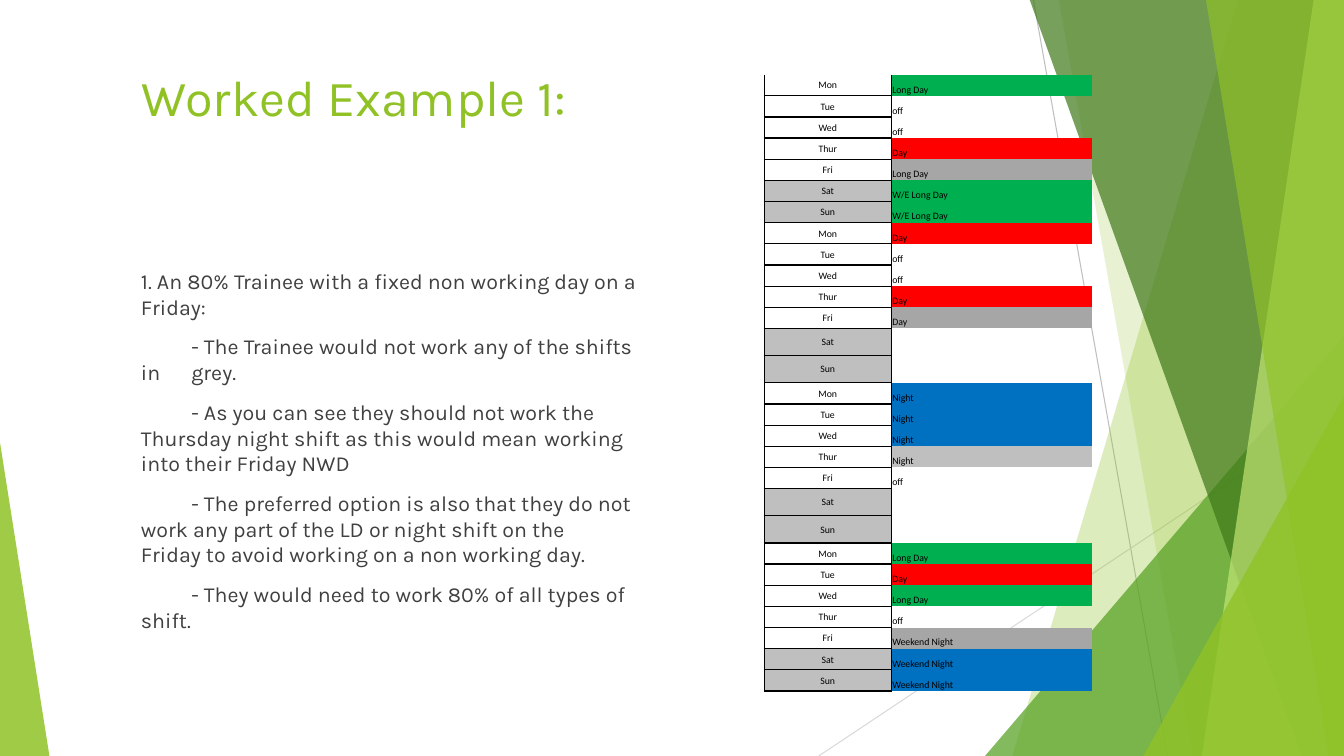
from itertools import cycle
from lxml import etree
from pptx import Presentation, util as u
from pptx.dml.color import RGBColor
from pptx.enum import shapes, text
from pptx.oxml.ns import qn

LIME = RGBColor(0x90, 0xC2, 0x26)
PALE = RGBColor(0xC0, 0xE4, 0x74)
LEAF = RGBColor(0x54, 0xA0, 0x21)
MOSS = RGBColor(0x3F, 0x78, 0x19)
MIST = RGBColor(0xD9, 0xD9, 0xD9)
SILVER = RGBColor(0xBF, 0xBF, 0xBF)
GREY = RGBColor(0xA6, 0xA6, 0xA6)
INK = RGBColor(0x40, 0x40, 0x40)
BLACK = RGBColor(0, 0, 0)
GREEN = RGBColor(0x00, 0xB0, 0x50)
RED = RGBColor(0xFF, 0, 0)
BLUE = RGBColor(0x00, 0x70, 0xC0)

WIDE, HIGH = 1333, 750
SCALE = 9144  # EMU in one px, 100 px to the inch
NO_STYLE = "{2D5ABB26-0587-4C30-8999-92F81FD0307C}"

DAYS = ["Mon", "Tue", "Wed", "Thur", "Fri", "Sat", "Sun"]
OFF, FREE = ("off", None), ("", None)
LONG, DAY, NIGHT = ("Long Day", GREEN), ("Day", RED), ("Night", BLUE)
WE_LONG, WE_NIGHT = ("W/E Long Day", GREEN), ("Weekend Night", BLUE)
SHIFTS = [
    LONG, OFF, OFF, DAY, ("Long Day", GREY), WE_LONG, WE_LONG,
    DAY, OFF, OFF, DAY, ("Day", GREY), FREE, FREE,
    NIGHT, NIGHT, NIGHT, ("Night", SILVER), OFF, FREE, FREE,
    LONG, DAY, LONG, OFF, ("Weekend Night", GREY), WE_NIGHT, WE_NIGHT,
]
NOTES = [
    "1. An 80% Trainee with a fixed non working day on a Friday:",
    "\t- The Trainee would not work any of the shifts in \tgrey.",
    "\t- As you can see they should not work the \tThursday night shift "
    "as this would mean \tworking into their Friday NWD",
    "\t- The preferred option is also that they do not \twork any part of "
    "the LD or night shift on the \tFriday to avoid working on a non working day.",
    "\t- They would need to work 80% of all types of \tshift.",
]


def px(*vals):
    return [u.Emu(v * SCALE) for v in vals]


class Deck:
    def __init__(self):
        self.prs = Presentation()
        self.prs.slide_width, self.prs.slide_height = px(WIDE, HIGH)
        self.slide = self.prs.slides.add_slide(self.prs.slide_layouts[6])
        self.items = self.slide.shapes
        self.font = "Karla"
        self.cell_font = "Calibri"

    def line(self, x1, y1, x2, y2, color):
        con = self.items.add_connector(
            shapes.MSO_CONNECTOR.STRAIGHT, *px(x1, y1, x2, y2))
        con.line.color.rgb = color
        con.line.width = u.Pt(0.75)
        etree.SubElement(con._element.spPr, qn("a:effectLst"))

    def paint(self, shape, color, alpha):
        """Fill without outline or shadow; alpha is opacity in percent."""
        shape.shadow.inherit = False
        shape.line.fill.background()
        shape.fill.solid()
        shape.fill.fore_color.rgb = color
        tint = shape._element.spPr.find(".//" + qn("a:srgbClr"))
        etree.SubElement(tint, qn("a:alpha"), val=str(alpha * 1000))

    def shard(self, top, foot, color, alpha):
        """Full-height band from a slanted left edge to the slide's right."""
        form = self.items.build_freeform(top, -1, scale=SCALE)
        form.add_line_segments([(WIDE, -1), (WIDE, HIGH), (foot, HIGH)])
        self.paint(form.convert_to_shape(), color, alpha)

    def wedge(self, x, y, w, tip, color, alpha):
        """Triangle standing on the slide's foot, its tip at 0 left to 1 right."""
        tri = self.items.add_shape(
            shapes.MSO_SHAPE.ISOSCELES_TRIANGLE, *px(x, y, w, HIGH - y))
        tri.adjustments[0] = tip
        self.paint(tri, color, alpha)

    def run(self, para, words, size, color, font):
        run = para.add_run()
        run.text = words
        run.font.size = u.Pt(size)
        run.font.name = font
        run.font.color.rgb = color

    def text(self, x, y, w, h, lines, size, color, gap=0):
        frame = self.items.add_textbox(*px(x, y, w, h)).text_frame
        frame.word_wrap = True
        for i, words in enumerate(lines):
            para = frame.add_paragraph() if i else frame.paragraphs[0]
            para.space_before = u.Pt(gap)
            self.run(para, words, size, color, self.font)

    def cell(self, cell, words, fill, anchor, align, sides=""):
        """Fill one table cell; sides lists the edges to rule, from LRTB."""
        cell.margin_left, cell.margin_right, cell.margin_top = px(1, 1, 1)
        cell.margin_bottom = 0
        cell.vertical_anchor = anchor
        props = cell._tc.get_or_add_tcPr()
        for side in sides:
            edge = etree.SubElement(props, qn("a:ln" + side), w=str(u.Pt(1)))
            solid = etree.SubElement(edge, qn("a:solidFill"))
            etree.SubElement(solid, qn("a:srgbClr"), val=str(BLACK))
        if fill is None:
            cell.fill.background()
        else:
            cell.fill.solid()
            cell.fill.fore_color.rgb = fill
        para = cell.text_frame.paragraphs[0]
        para.alignment = align
        if words:
            self.run(para, words, 7, BLACK, self.cell_font)
        else:
            etree.SubElement(para._p, qn("a:endParaRPr"), sz="700")

    def rota(self, x, y, cols, shifts):
        highs = [21 if name else 27 for name, _ in shifts]
        table = self.items.add_table(
            len(shifts), len(cols), *px(x, y, sum(cols), sum(highs))).table
        table.first_row = table.horz_banding = False
        table._tbl.tblPr.find(qn("a:tableStyleId")).text = NO_STYLE
        for col, wide in zip(table.columns, px(*cols)):
            col.width = wide
        mid, low = text.MSO_ANCHOR.MIDDLE, text.MSO_ANCHOR.BOTTOM
        for i, (day, (name, fill)) in enumerate(zip(cycle(DAYS), shifts)):
            table.rows[i].height = px(highs[i])[0]
            shade = SILVER if day in ("Sat", "Sun") else None
            self.cell(table.cell(i, 0), day, shade, mid,
                      text.PP_ALIGN.CENTER, "LRTB" if i else "LRB")
            self.cell(table.cell(i, 1), name, fill, low, text.PP_ALIGN.LEFT)


def main():
    deck = Deck()
    deck.line(1025, 0, 1158, HIGH, SILVER)
    deck.line(WIDE, 403, 812, HIGH, MIST)
    deck.shard(1228, 1004, LIME, 30)
    deck.shard(1050, 1183, LIME, 20)
    deck.wedge(977, 333, 356, 1, LEAF, 72)
    deck.shard(1021, 1291, MOSS, 70)
    deck.shard(1303, 1192, PALE, 70)
    deck.shard(1196, 1318, LIME, 65)
    deck.wedge(1134, 393, 199, 1, LIME, 80)
    deck.wedge(0, 439, 49, 0, LIME, 85)
    deck.text(131, 61, 1121, 161, ["Worked Example 1:"], 36, LIME)
    deck.text(130, 261, 526, 408, NOTES, 15.3, INK, gap=10)
    deck.rota(758, 74, [126, 199], SHIFTS)
    deck.prs.save("out.pptx")


if __name__ == "__main__":
    main()
